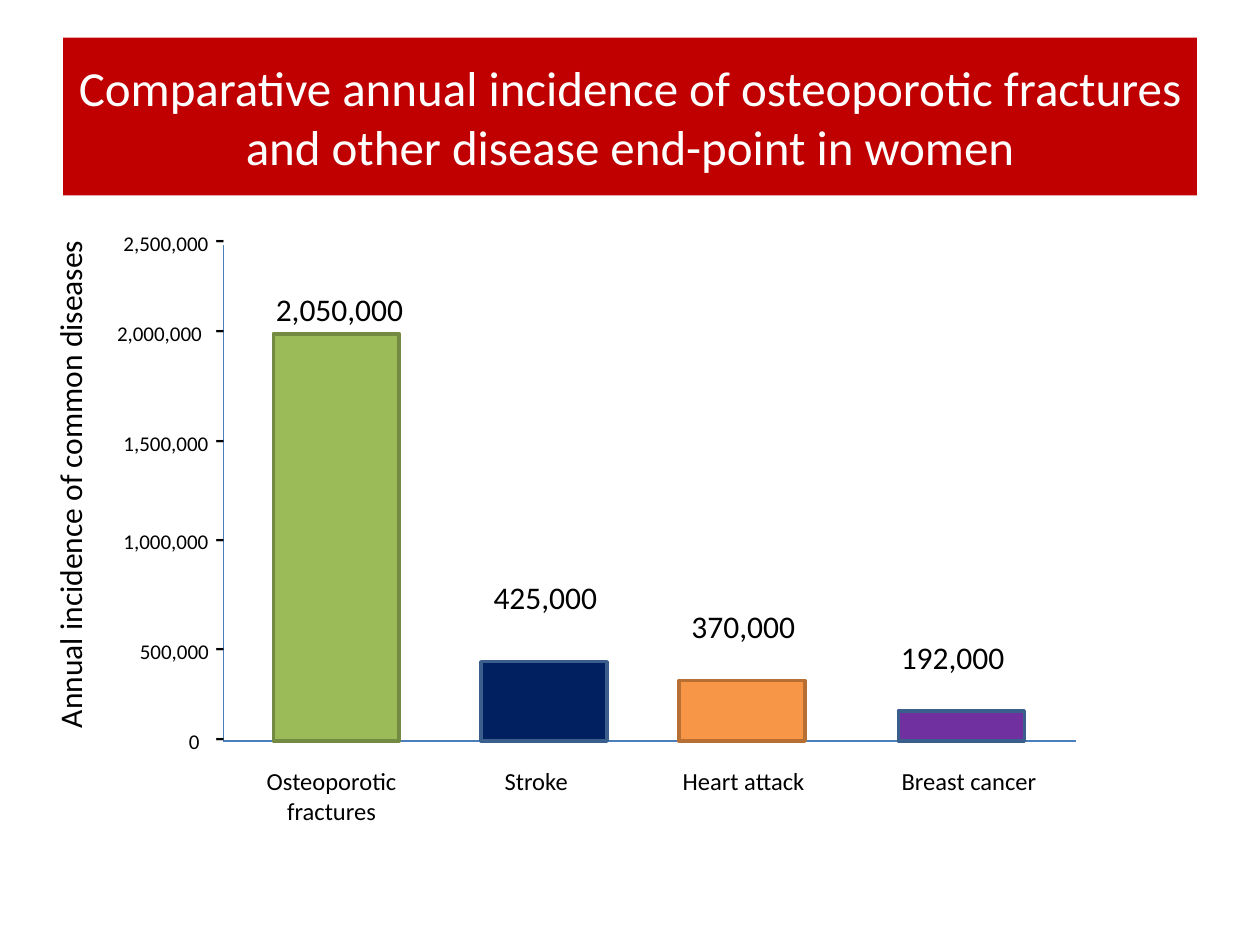
from pptx import Presentation
from pptx import util as u
from pptx.dml.color import RGBColor
from pptx.enum import shapes, text
from pptx.oxml.ns import qn
from lxml import etree

COLORS = {
    "banner": "C00000", "white": "FFFFFF", "ink": "000000", "axis": "4B7EBC",
    "green": "9BBB59", "green_edge": "738A42", "navy": "002060", "blue_edge": "3A5F8C",
    "orange": "F79646", "orange_edge": "B76F34", "purple": "7030A0",
}


class IncidenceSlide:
    font_name = "Calibri"

    def __init__(self, deck):
        self.slide = deck.slides.add_slide(deck.slide_layouts[5])

    def color(self, name):
        return RGBColor.from_string(COLORS[name])

    def style(self, frame, size, color, align):
        for paragraph in frame.paragraphs:
            paragraph.alignment = align
            paragraph.font.name = self.font_name
            paragraph.font.size = u.Pt(size)
            paragraph.font.color.rgb = self.color(color)

    def title(self, wording, left, top, width, height):
        banner = self.slide.shapes.title
        banner.left, banner.top = u.Cm(left), u.Cm(top)
        banner.width, banner.height = u.Cm(width), u.Cm(height)
        banner.fill.solid()
        banner.fill.fore_color.rgb = self.color("banner")
        frame = banner.text_frame
        frame.text = wording
        frame.vertical_anchor = text.MSO_ANCHOR.MIDDLE
        self.style(frame, 28, "white", text.PP_ALIGN.CENTER)

    def label(self, wording, left, top, width, height, size,
              align=text.PP_ALIGN.LEFT, rotation=0):
        box = self.slide.shapes.add_textbox(u.Cm(left), u.Cm(top), u.Cm(width), u.Cm(height))
        box.rotation = rotation
        frame = box.text_frame
        frame.text = wording
        frame.word_wrap = False
        frame.auto_size = text.MSO_AUTO_SIZE.SHAPE_TO_FIT_TEXT
        self.style(frame, size, "ink", align)

    def axis(self, x1, y1, x2, y2):
        line = self.slide.shapes.add_connector(
            shapes.MSO_CONNECTOR.STRAIGHT, u.Cm(x1), u.Cm(y1), u.Cm(x2), u.Cm(y2))
        line.line.color.rgb = self.color("axis")
        line.line.width = u.Pt(0.75)
        etree.SubElement(line._element.spPr, qn("a:effectLst"))

    def bar(self, left, top, width, bottom, fill, edge):
        column = self.slide.shapes.add_shape(
            shapes.MSO_SHAPE.RECTANGLE, u.Cm(left), u.Cm(top), u.Cm(width), u.Cm(bottom - top))
        column.shadow.inherit = False
        column.fill.solid()
        column.fill.fore_color.rgb = self.color(fill)
        column.line.color.rgb = self.color(edge)
        column.line.width = u.Pt(2)


def main():
    deck = Presentation()
    deck.slide_width, deck.slide_height = u.Cm(25.4), u.Cm(19.05)
    page = IncidenceSlide(deck)
    page.title("Comparative annual incidence of osteoporotic fractures "
               "and other disease end-point in women", 1.27, 0.76, 22.86, 3.18)

    axis_x, baseline = 4.5, 14.94
    page.axis(axis_x, baseline, 21.69, baseline)
    page.axis(axis_x, baseline, axis_x, 4.93)

    diseases = [
        ("Osteoporotic\nfractures", 5.11, 3.15, "2,050,000", 5.31, 5.72, 3.1,
         5.51, 6.73, "green", "green_edge"),
        ("Stroke", 9.91, 1.8, "425,000", 9.7, 11.53, 2.62,
         9.7, 13.34, "navy", "blue_edge"),
        ("Heart attack", 13.49, 3, "370,000", 13.69, 12.12, 2.62,
         13.69, 13.72, "orange", "orange_edge"),
        ("Breast cancer", 17.91, 3.25, "192,000", 17.91, 12.73, 2.62,
         18.11, 14.33, "purple", "blue_edge"),
    ]
    for (disease, name_x, name_width, cases, cases_x, cases_y, cases_width,
         bar_x, bar_top, fill, edge) in diseases:
        page.bar(bar_x, bar_top, 2.54, baseline, fill, edge)
        name_height = 1.45 if "\n" in disease else 0.86
        page.label(disease, name_x, 15.32, name_width, name_height, 14, text.PP_ALIGN.CENTER)
        page.label(cases, cases_x, cases_y, cases_width, 1.02, 18)

    scale = [
        ("2,500,000", 2.24, 2.26, 4.29), ("2,000,000", 2.11, 2.26, 6.1),
        ("1,500,000", 2.24, 2.26, 8.33), ("1,000,000", 2.24, 2.26, 10.31),
        ("500,000", 2.57, 1.93, 12.52), ("0", 3.56, 0.74, 14.33),
    ]
    for amount, left, width, tick_top in scale:
        page.label("-", 4.09, tick_top, 0.71, 1.02, 18)
        page.label(amount, left, tick_top + 0.23, width, 0.76, 12)

    page.label("Annual incidence of common diseases", -3.89, 9.12, 10.59, 1.02, 18, rotation=270)
    deck.save("out.pptx")


if __name__ == "__main__":
    main()
